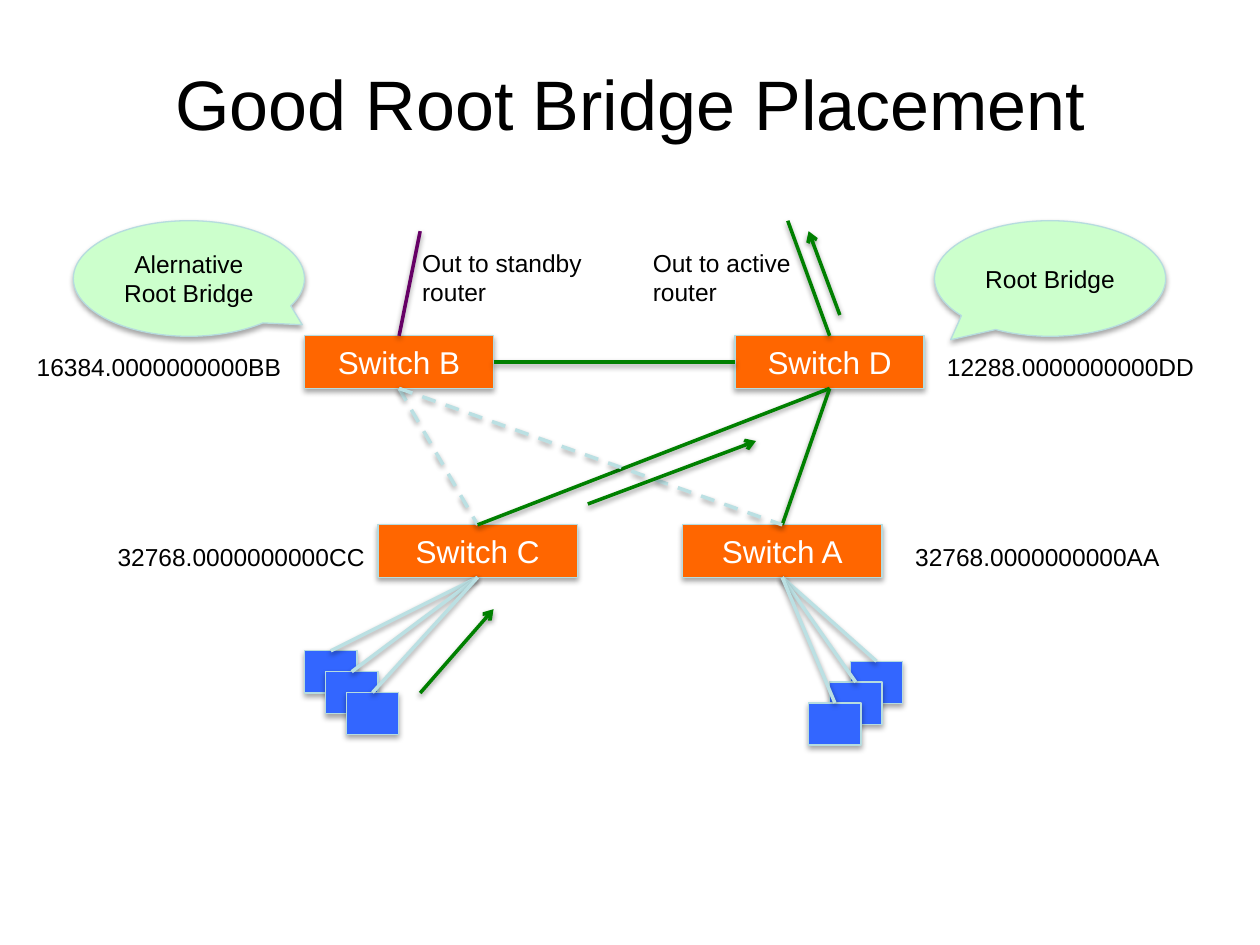
"""Build a slide showing good root bridge placement in a switched network."""
from dataclasses import dataclass

from pptx import Presentation
from pptx.dml.color import RGBColor
from pptx.enum.dml import MSO_LINE
from pptx.enum.shapes import MSO_CONNECTOR, MSO_SHAPE
from pptx.enum.text import MSO_ANCHOR, MSO_AUTO_SIZE, PP_ALIGN
from pptx.oxml import parse_xml
from pptx.oxml.ns import nsdecls
from pptx.shapes.autoshape import Shape
from pptx.shapes.connector import Connector
from pptx.slide import Slide
from pptx.text.text import TextFrame
from pptx.util import Cm, Pt

TOP, LEFT, BOTTOM, RIGHT = range(4)


@dataclass(frozen=True)
class Theme:
    """Colours, typeface and sizes of the slide."""
    font: str = "Arial"
    title_size: int = 40
    switch_size: int = 18
    label_size: int = 14
    ink: str = "000000"
    white: str = "FFFFFF"
    switch: str = "FF6600"
    host: str = "3366FF"
    callout: str = "CCFFCC"
    outline: str = "B6DCDF"
    active: str = "008000"
    standby: str = "660066"
    idle: str = "BBE0E3"
    outline_width: float = 0.75
    link_width: float = 2


@dataclass(frozen=True)
class Box:
    """Place and size in centimetres, with optional wording."""
    left: float
    top: float
    width: float
    height: float
    wording: str = ""


@dataclass(frozen=True)
class Callout:
    """Speech balloon with its pointer position."""
    box: Box
    pointer: tuple[float, float]


@dataclass(frozen=True)
class Label:
    """Free text with its alignment and wrapping."""
    box: Box
    align: PP_ALIGN = PP_ALIGN.LEFT
    wrap: bool = False


@dataclass(frozen=True)
class HostStack:
    """Staggered hosts that hang from one switch."""
    switch: str
    left: float
    top: float
    step: float


@dataclass(frozen=True)
class Flow:
    """Arrow along the path of the traffic."""
    start: tuple[float, float]
    end: tuple[float, float]


THEME = Theme()
SWITCH_HEIGHT = 1.06
HOSTS_PER_STACK = 3
HOST_STEP = 0.42

SWITCHES = {
    "D": Box(14.82, 6.77, 3.81, SWITCH_HEIGHT, "Switch D"),
    "C": Box(7.62, 10.58, 4.02, SWITCH_HEIGHT, "Switch C"),
    "B": Box(6.14, 6.77, 3.81, SWITCH_HEIGHT, "Switch B"),
    "A": Box(13.76, 10.58, 4.02, SWITCH_HEIGHT, "Switch A"),
}
TRUNKS = [
    ("B", RIGHT, "D", LEFT, THEME.active),
    ("B", BOTTOM, "C", TOP, THEME.idle),
    ("D", BOTTOM, "C", TOP, THEME.active),
    ("D", BOTTOM, "A", TOP, THEME.active),
    ("B", BOTTOM, "A", TOP, THEME.idle),
]
UPLINKS = [("D", (15.88, 4.45), THEME.active), ("B", (8.47, 4.66), THEME.standby)]
CALLOUTS = [
    Callout(Box(1.48, 4.45, 4.66, 2.33, "Alernative Root Bridge"), (0.49, 0.4)),
    Callout(Box(18.84, 4.45, 4.66, 2.33, "Root Bridge"), (-0.43, 0.53)),
]
HOST_STACKS = [
    HostStack("C", 6.14, 13.12, HOST_STEP),
    HostStack("A", 17.14, 13.33, -HOST_STEP),
]
LABELS = [
    Label(Box(0.43, 6.98, 5.49, 0.86, "16384.0000000000BB"), PP_ALIGN.RIGHT),
    Label(Box(18.84, 6.98, 5.54, 0.86, "12288.0000000000DD")),
    Label(Box(2.12, 10.8, 5.54, 0.86, "32768.0000000000CC")),
    Label(Box(18.2, 10.8, 5.46, 0.86, "32768.0000000000AA")),
    Label(Box(12.91, 4.87, 3.39, 1.44, "Out to active router"), wrap=True),
    Label(Box(8.26, 4.87, 4.23, 1.44, "Out to standby router"), wrap=True),
]
FLOWS = [
    Flow((8.47, 13.97), (9.95, 12.28)),
    Flow((11.85, 10.16), (15.24, 8.89)),
    Flow((16.93, 6.35), (16.3, 4.66)),
]


def place(box: Box) -> tuple[Cm, Cm, Cm, Cm]:
    """Return the box as lengths."""
    return Cm(box.left), Cm(box.top), Cm(box.width), Cm(box.height)


def write(frame: TextFrame, wording: str, size: int, colour: str, align: PP_ALIGN) -> None:
    """Set the text of a frame and format it."""
    frame.text = wording
    paragraph = frame.paragraphs[0]
    paragraph.alignment = align
    for run in paragraph.runs:
        run.font.name = THEME.font
        run.font.size = Pt(size)
        run.font.color.rgb = RGBColor.from_string(colour)


def cast_shadow(part: Shape | Connector, distance: int, opacity: int) -> None:
    """Give a drawn part a soft shadow straight below it."""
    part.element.spPr.append(parse_xml(
        f'<a:effectLst {nsdecls("a")}><a:outerShdw blurRad="40000" dist="{distance}" '
        f'dir="5400000" rotWithShape="0"><a:srgbClr val="000000">'
        f'<a:alpha val="{opacity * 1000}"/></a:srgbClr></a:outerShdw></a:effectLst>'))


def add_block(slide: Slide, kind: MSO_SHAPE, box: Box, fill: str,
              size: int = THEME.label_size, ink: str = THEME.ink) -> Shape:
    """Draw a filled, outlined shape with centred text."""
    block = slide.shapes.add_shape(kind, *place(box))
    block.fill.solid()
    block.fill.fore_color.rgb = RGBColor.from_string(fill)
    block.line.color.rgb = RGBColor.from_string(THEME.outline)
    block.line.width = Pt(THEME.outline_width)
    cast_shadow(block, 23000, 35)
    if box.wording:
        block.text_frame.vertical_anchor = MSO_ANCHOR.MIDDLE
        write(block.text_frame, box.wording, size, ink, PP_ALIGN.CENTER)
    return block


def add_link(slide: Slide, colour: str, start: tuple[float, float] = (0, 0),
             end: tuple[float, float] = (0, 0), begin_at: tuple[Shape, int] | None = None,
             end_at: tuple[Shape, int] | None = None, dashed: bool = False,
             arrow: bool = False) -> None:
    """Draw a line between points or connection sites."""
    link = slide.shapes.add_connector(MSO_CONNECTOR.STRAIGHT, *map(Cm, start + end))
    if begin_at:
        link.begin_connect(*begin_at)
    if end_at:
        link.end_connect(*end_at)
    link.line.color.rgb = RGBColor.from_string(colour)
    link.line.width = Pt(THEME.link_width)
    if dashed:
        link.line.dash_style = MSO_LINE.DASH
    if arrow:
        link.line._get_or_add_ln().append(
            parse_xml(f'<a:tailEnd {nsdecls("a")} type="arrow"/>'))
    cast_shadow(link, 20000, 38)


def add_label(slide: Slide, label: Label) -> None:
    """Draw a free text label."""
    frame = slide.shapes.add_textbox(*place(label.box)).text_frame
    frame.word_wrap = label.wrap
    frame.auto_size = MSO_AUTO_SIZE.SHAPE_TO_FIT_TEXT
    write(frame, label.box.wording, THEME.label_size, THEME.ink, label.align)


def add_hosts(slide: Slide, stack: HostStack, switch: Shape) -> None:
    """Draw a stack of hosts and link each to its switch."""
    hosts = [add_block(slide, MSO_SHAPE.RECTANGLE,
                       Box(stack.left + i * stack.step, stack.top + i * HOST_STEP, 1.06, 0.85),
                       THEME.host) for i in range(HOSTS_PER_STACK)]
    for host in hosts:
        add_link(slide, THEME.idle, begin_at=(switch, BOTTOM), end_at=(host, TOP))


def main() -> None:
    """Assemble and save the slide."""
    deck = Presentation()
    deck.slide_width, deck.slide_height = Cm(25.4), Cm(19.05)
    slide = deck.slides.add_slide(deck.slide_layouts[5])
    title = slide.shapes.title
    title.left, title.top, title.width, title.height = place(Box(1.27, 0.76, 22.86, 2.62))
    title.text_frame.vertical_anchor = MSO_ANCHOR.MIDDLE
    write(title.text_frame, "Good Root Bridge Placement", THEME.title_size, THEME.ink,
          PP_ALIGN.CENTER)
    switches = {key: add_block(slide, MSO_SHAPE.RECTANGLE, box, THEME.switch,
                               THEME.switch_size, THEME.white)
                for key, box in SWITCHES.items()}
    for upper, exit_site, lower, entry_site, colour in TRUNKS:
        add_link(slide, colour, begin_at=(switches[upper], exit_site),
                 end_at=(switches[lower], entry_site), dashed=colour == THEME.idle)
    for key, outside, colour in UPLINKS:
        add_link(slide, colour, start=outside, end_at=(switches[key], TOP))
    for callout in CALLOUTS:
        balloon = add_block(slide, MSO_SHAPE.OVAL_CALLOUT, callout.box, THEME.callout)
        balloon.adjustments[0], balloon.adjustments[1] = callout.pointer
    for stack in HOST_STACKS:
        add_hosts(slide, stack, switches[stack.switch])
    for flow in FLOWS:
        add_link(slide, THEME.active, flow.start, flow.end, arrow=True)
    for label in LABELS:
        add_label(slide, label)
    deck.save("out.pptx")


if __name__ == "__main__":
    main()
